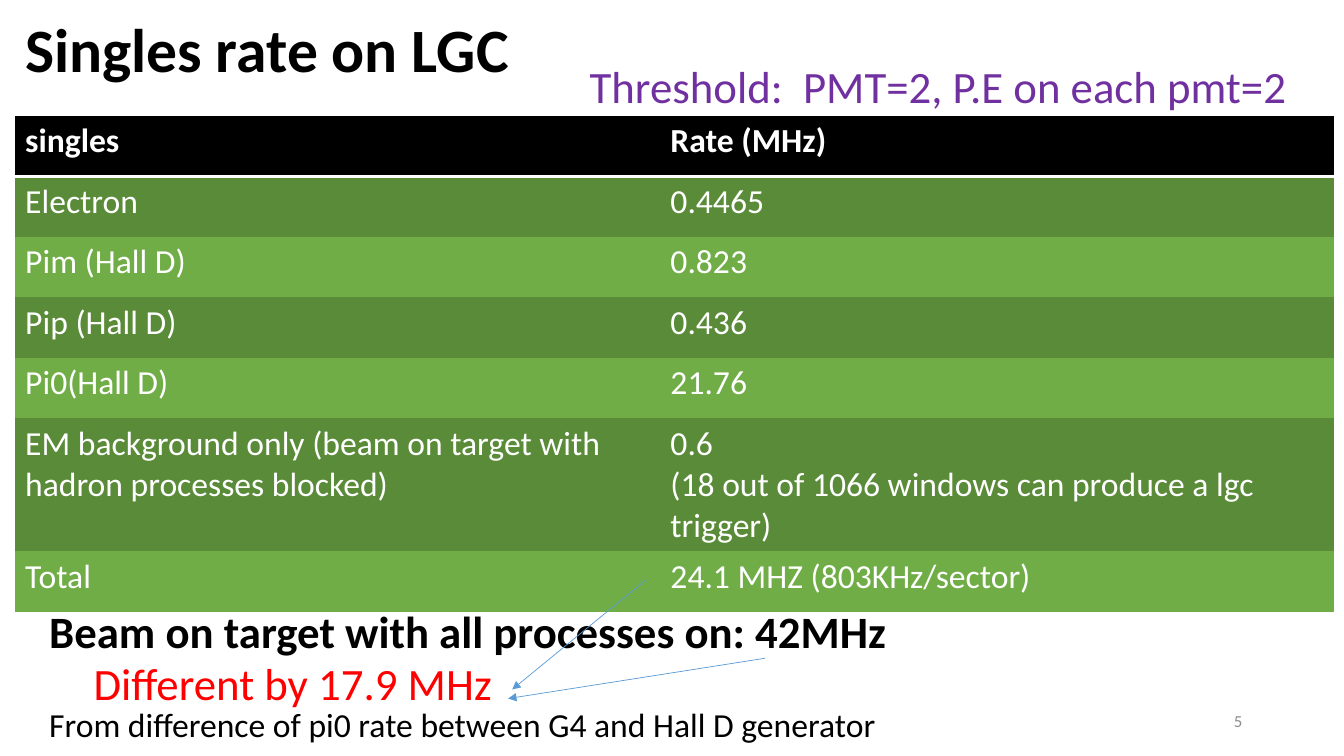
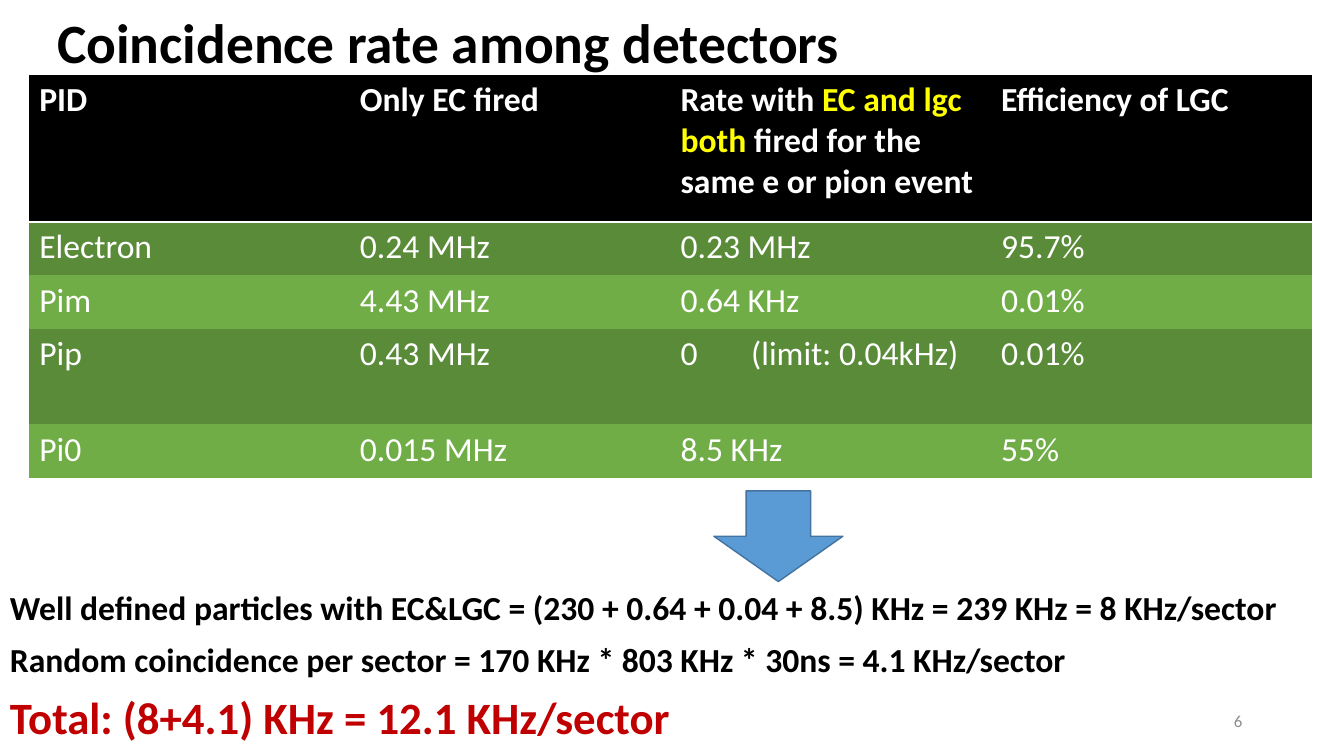
import pptx
import pptx.dml.color
import pptx.enum.shapes
import pptx.enum.text
import pptx.oxml
import pptx.oxml.ns
import pptx.util
from lxml import etree

Inches, Pt = pptx.util.Inches, pptx.util.Pt
RGBColor = pptx.dml.color.RGBColor
Anchor = pptx.enum.text.MSO_ANCHOR
Align = pptx.enum.text.PP_ALIGN

FONT = "Calibri"
BLACK = RGBColor(0x00, 0x00, 0x00)
WHITE = RGBColor(0xFF, 0xFF, 0xFF)
YELLOW = RGBColor(0xFF, 0xFF, 0x00)
RED = RGBColor(0xFF, 0x00, 0x00)
DARK_RED = RGBColor(0xC0, 0x00, 0x00)
PURPLE = RGBColor(0x70, 0x30, 0xA0)
GRAY = RGBColor(0x8C, 0x8C, 0x8C)
BLUE = RGBColor(0x5B, 0x9B, 0xD5)
BLUE_EDGE = RGBColor(0x43, 0x73, 0x9E)
BANDS = (RGBColor(0x5A, 0x8B, 0x39), RGBColor(0x70, 0xAD, 0x47))
NO_TABLE_STYLE = "{2D5ABB26-0587-4C30-8999-92F81FD0307C}"
TABLE_SIZE = 24
TAB_STOP = Inches(0.7)

# A cell is a string, or a list of (text, colour) runs.
# A note is (text, left, top, width, size, colour, bold).
SLIDES = [
    {
        "number": 5,
        "title": ("Singles rate on LGC", 0.15, 0.03, 12.11, 0.98, 44),
        "table": {
            "at": (0.15, 1.15),
            "columns": [6.4, 6.68],
            "row_heights": [0.6] * 5 + [1.32, 0.6],
            "rows": [
                ["singles", "Rate (MHz)"],
                ["Electron", "0.4465"],
                ["Pim (Hall D)", "0.823"],
                ["Pip (Hall D)", "0.436"],
                ["Pi0(Hall D)", "21.76"],
                ["EM background only (beam on target with hadron processes blocked)",
                 "0.6\n(18 out of 1066 windows can produce a lgc trigger)"],
                ["Total", "24.1 MHZ (803KHz/sector)"],
            ],
        },
        "notes": [
            ("Beam on target with all processes on: 42MHz", 0.39, 5.94, 8.9, 32, BLACK, True),
            ("Different by 17.9 MHz", 0.83, 6.46, 4.3, 32, RED, False),
            ("From difference of pi0 rate between G4 and Hall D generator",
             0.39, 6.93, 9.44, 24, BLACK, False),
            ("Threshold:  PMT=2, P.E on each pmt=2", 5.75, 0.53, 7.3, 32, PURPLE, False),
        ],
        "pointers": [(6.41, 5.75, 5.08, 6.84), (7.59, 6.53, 5.04, 6.93)],
    },
    {
        "number": 6,
        "title": ("Coincidence rate among detectors", 0.47, 0.19, 11.5, 0.52, 39.6),
        "table": {
            "at": (0.29, 0.74),
            "columns": [3.18] * 4,
            "row_heights": [1.46, 0.53, 0.53, 0.95, 0.53],
            "rows": [
                ["PID", "Only EC fired",
                 [("Rate with ", WHITE), ("EC and lgc both", YELLOW),
                  (" fired for the same e or pion event", WHITE)],
                 "Efficiency of LGC"],
                ["Electron", "0.24 MHz", "0.23 MHz", "95.7%"],
                ["Pim", "4.43 MHz", "0.64 KHz", "0.01%"],
                ["Pip", "0.43 MHz", "0\t(limit: 0.04kHz)", "0.01%"],
                ["Pi0", "0.015 MHz", "8.5 KHz", "55%"],
            ],
        },
        "notes": [
            ("Well defined particles with EC&LGC = (230 + 0.64 + 0.04 + 8.5) KHz"
             " = 239 KHz = 8 KHz/sector", 0, 5.77, 13.3, 24, BLACK, True),
            ("Random coincidence per sector = 170 KHz * 803 KHz * 30ns = 4.1 KHz/sector",
             0, 6.29, 11, 24, BLACK, True),
            ("Total: (8+4.1) KHz = 12.1 KHz/sector", 0, 6.79, 7, 32, DARK_RED, True),
        ],
        "down_arrow": (7.08, 4.87, 1.28, 0.9),
    },
]


def style_run(run, size, colour, bold=False):
    font = run.font
    font.name, font.size, font.bold = FONT, Pt(size), bold
    font.color.rgb = colour


def add_text(slide, text, left, top, width, height, size, colour, bold=False,
             anchor=Anchor.TOP, align=Align.LEFT, line_spacing=None):
    frame = slide.shapes.add_textbox(*map(Inches, (left, top, width, height))).text_frame
    frame.word_wrap = True
    frame.vertical_anchor = anchor
    frame.text = text
    paragraph = frame.paragraphs[0]
    paragraph.alignment = align
    paragraph.line_spacing = line_spacing
    style_run(paragraph.runs[0], size, colour, bold)


def add_header_rule(cell):
    """Draw the white line under a header cell."""
    rule = pptx.oxml.parse_xml(
        f'<a:lnB {pptx.oxml.ns.nsdecls("a")} w="{Pt(2)}"><a:solidFill>'
        f'<a:srgbClr val="{WHITE}"/></a:solidFill></a:lnB>')
    cell._tc.get_or_add_tcPr().insert(0, rule)


def add_tab_stop(paragraph):
    tabs = etree.SubElement(paragraph._p.get_or_add_pPr(), pptx.oxml.ns.qn("a:tabLst"))
    etree.SubElement(tabs, pptx.oxml.ns.qn("a:tab"), pos=str(TAB_STOP), algn="l")


def fill_cell(cell, content, is_header):
    if isinstance(content, str):
        cell.text_frame.text = content
        for paragraph in cell.text_frame.paragraphs:
            style_run(paragraph.runs[0], TABLE_SIZE, WHITE, is_header)
            if "\t" in paragraph.text:
                add_tab_stop(paragraph)
        return
    for text, colour in content:
        run = cell.text_frame.paragraphs[0].add_run()
        run.text = text
        style_run(run, TABLE_SIZE, colour, is_header)


def add_rate_table(slide, at, columns, row_heights, rows):
    size = (sum(columns), sum(row_heights))
    table = slide.shapes.add_table(
        len(rows), len(columns), *map(Inches, at + size)).table
    table._tbl.tblPr.find(pptx.oxml.ns.qn("a:tableStyleId")).text = NO_TABLE_STYLE
    for column, width in zip(table.columns, columns):
        column.width = Inches(width)
    for r, (height, contents) in enumerate(zip(row_heights, rows)):
        table.rows[r].height = Inches(height)
        is_header = r == 0
        for c, content in enumerate(contents):
            cell = table.cell(r, c)
            cell.fill.solid()
            cell.fill.fore_color.rgb = BLACK if is_header else BANDS[(r - 1) % 2]
            fill_cell(cell, content, is_header)
            if is_header:
                add_header_rule(cell)


def add_pointer(slide, ends):
    pointer = slide.shapes.add_connector(
        pptx.enum.shapes.MSO_CONNECTOR.STRAIGHT, *map(Inches, ends))
    pointer.line.color.rgb = BLUE
    pointer.line.width = Pt(0.5)
    etree.SubElement(pointer.line._get_or_add_ln(),
                     pptx.oxml.ns.qn("a:tailEnd"), type="triangle")
    etree.SubElement(pointer._element.spPr, pptx.oxml.ns.qn("a:effectLst"))


def add_down_arrow(slide, box):
    arrow = slide.shapes.add_shape(
        pptx.enum.shapes.MSO_SHAPE.DOWN_ARROW, *map(Inches, box))
    arrow.shadow.inherit = False
    arrow.fill.solid()
    arrow.fill.fore_color.rgb = BLUE
    arrow.line.color.rgb = BLUE_EDGE
    arrow.line.width = Pt(1)


def build_slide(deck, content):
    slide = deck.slides.add_slide(deck.slide_layouts[6])
    *title, title_size = content["title"]
    add_text(slide, *title, title_size, BLACK, True, Anchor.MIDDLE, line_spacing=0.9)
    add_rate_table(slide, **content["table"])
    add_text(slide, str(content["number"]), 9.42, 6.95, 3, 0.4, 12, GRAY,
             anchor=Anchor.MIDDLE, align=Align.RIGHT)
    for text, left, top, width, size, colour, bold in content["notes"]:
        add_text(slide, text, left, top, width, size / 50, size, colour, bold)
    for ends in content.get("pointers", []):
        add_pointer(slide, ends)
    if "down_arrow" in content:
        add_down_arrow(slide, content["down_arrow"])


def main():
    deck = pptx.Presentation()
    deck.slide_width, deck.slide_height = Inches(13.33), Inches(7.5)
    for content in SLIDES:
        build_slide(deck, content)
    deck.save("out.pptx")


if __name__ == "__main__":
    main()
